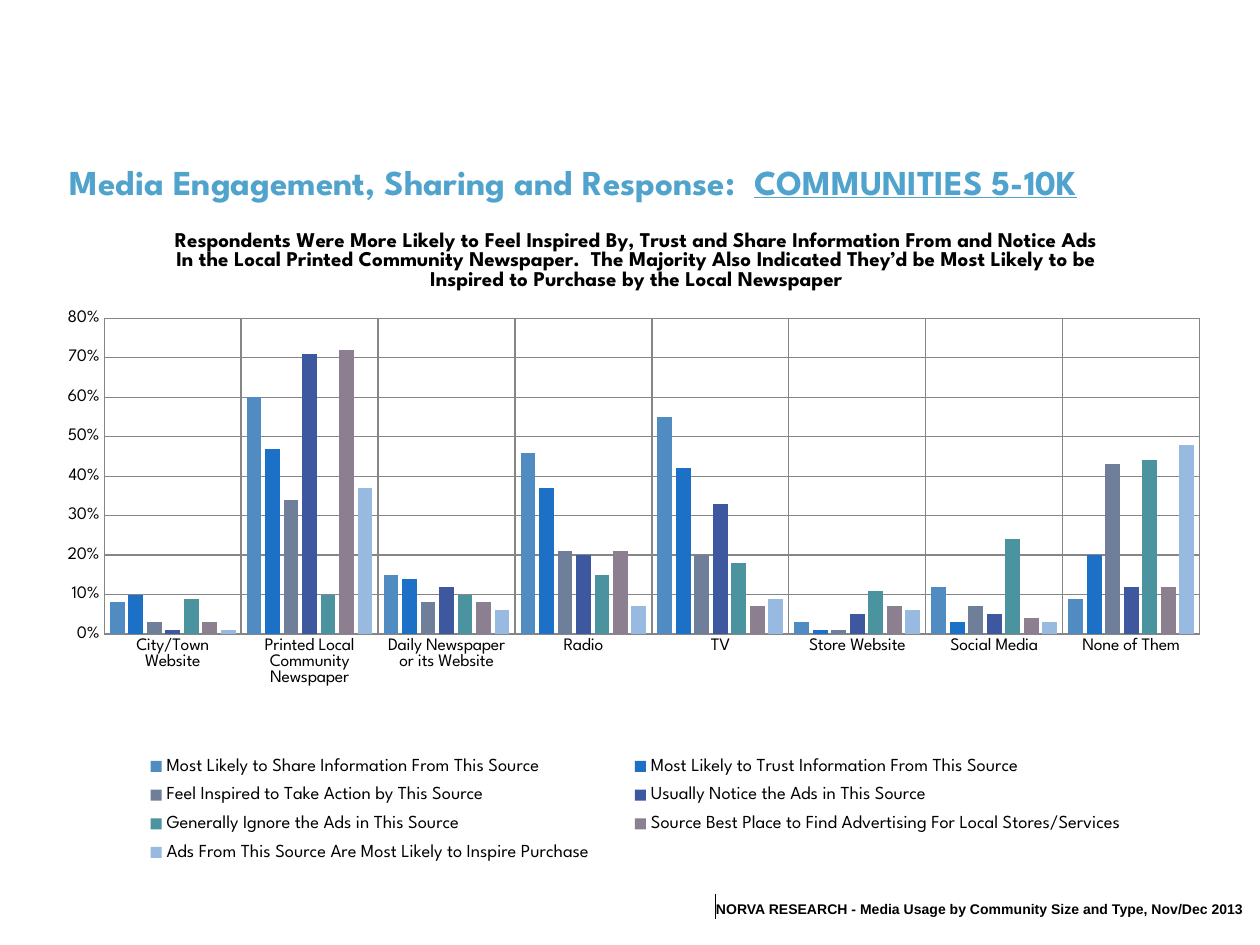
from lxml import etree
from pptx import Presentation
from pptx import util as u
from pptx.chart.data import CategoryChartData
from pptx.dml.color import RGBColor
from pptx.enum import chart as charts, text
from pptx.oxml import parse_xml
from pptx.oxml.ns import nsdecls, qn

PX = 914400 / 126
BLACK = RGBColor(0, 0, 0)
SKY = RGBColor(0x50, 0xA3, 0xCD)
GRID = RGBColor(0x86, 0x86, 0x86)
DISPLAY = "League Spartan"

HEADING = [("Media Engagement, Sharing and Response:  ", False), ("COMMUNITIES 5-10K", True)]
CHART_TITLE = (
    "Respondents Were More Likely to Feel Inspired By, Trust and Share Information From "
    "and Notice Ads In the Local Printed Community Newspaper.  The Majority Also Indicated "
    "They’d be Most Likely to be Inspired to Purchase by the Local Newspaper"
)
FOOTER = "NORVA RESEARCH - Media Usage by Community Size and Type, Nov/Dec 2013"
SOURCES = [
    "City/Town Website", "Printed Local Community Newspaper", "Daily Newspaper or its Website",
    "Radio", "TV", "Store Website", "Social Media", "None of Them",
]
RESPONSES = [
    ("Most Likely to Share Information From This Source",
     RGBColor(0x50, 0x8B, 0xC1), [8, 60, 15, 46, 55, 3, 12, 9]),
    ("Most Likely to Trust Information From This Source",
     RGBColor(0x1C, 0x70, 0xC6), [10, 47, 14, 37, 42, 1, 3, 20]),
    ("Feel Inspired to Take Action by This Source",
     RGBColor(0x6F, 0x7F, 0x99), [3, 34, 8, 21, 20, 1, 7, 43]),
    ("Usually Notice the Ads in This Source",
     RGBColor(0x3D, 0x58, 0x9E), [1, 71, 12, 20, 33, 5, 5, 12]),
    ("Generally Ignore the Ads in This Source",
     RGBColor(0x4B, 0x93, 0x9F), [9, 10, 10, 15, 18, 11, 24, 44]),
    ("Source Best Place to Find Advertising For Local Stores/Services",
     RGBColor(0x8C, 0x7F, 0x90), [3, 72, 8, 21, 7, 7, 4, 12]),
    ("Ads From This Source Are Most Likely to Inspire Purchase",
     RGBColor(0x98, 0xBA, 0xE0), [1, 37, 6, 7, 9, 6, 3, 48]),
]


def px(*lengths):
    return [u.Emu(round(length * PX)) for length in lengths]


def style(font, size, color=BLACK, bold=False, name=DISPLAY):
    font.name, font.size, font.bold = name, u.Pt(size), bold
    font.color.rgb = color


def place(parent, index, **settings):
    layout = parent.find(qn("c:layout"))
    if layout is None:
        layout = parse_xml(f"<c:layout {nsdecls('c')}/>")
        parent.insert(index, layout)
    manual = etree.SubElement(layout, qn("c:manualLayout"))
    for key, value in settings.items():
        etree.SubElement(manual, qn(f"c:{key}")).set("val", str(value))


def add_chart(page):
    data = CategoryChartData(number_format="0%")
    data.categories = SOURCES
    for name, _, percents in RESPONSES:
        data.add_series(name, [percent / 100 for percent in percents])
    frame = page.shapes.add_chart(
        charts.XL_CHART_TYPE.COLUMN_CLUSTERED, *px(28, 152, 1192, 743), data)
    chart = frame.chart
    style(chart.font, 10)

    span = chart.chart_title.text_frame.paragraphs[0].add_run()
    span.text = CHART_TITLE
    style(span.font, 12, bold=True)
    place(chart.chart_title._element, 1, xMode="edge", yMode="edge", x=0.12, y=0.1)

    plot = chart.plots[0]
    plot.gap_width, plot.overlap, plot.vary_by_categories = 75, -25, False
    for series, (_, color, _) in zip(plot.series, RESPONSES):
        series.format.fill.solid()
        series.format.fill.fore_color.rgb = color
    place(plot._element.getparent(), 0, layoutTarget="inner", xMode="edge", yMode="edge",
          x=0.064, y=0.224, w=0.919, h=0.425)

    for axis in (chart.category_axis, chart.value_axis):
        axis.has_major_gridlines = True
        axis.major_tick_mark = axis.minor_tick_mark = charts.XL_TICK_MARK.NONE
        style(axis.tick_labels.font, 10, bold=axis is chart.value_axis)
        for line in (axis.major_gridlines.format.line, axis.format.line):
            line.color.rgb = GRID
            line.width = u.Pt(0.75)
    values = chart.value_axis
    values.minimum_scale, values.maximum_scale, values.major_unit = 0, 0.8, 0.1
    values.tick_labels.number_format = "0%"
    values.tick_labels.number_format_is_linked = False
    values.format.line.fill.background()

    chart.has_legend = True
    legend = chart.legend
    legend.position = charts.XL_LEGEND_POSITION.BOTTOM
    legend.include_in_layout = False
    style(legend.font, 10.5)
    place(legend._element, 1, xMode="edge", yMode="edge", x=0.07, y=0.8, w=0.88, h=0.17)


def add_heading(page):
    box = page.shapes.add_textbox(*px(57, 154, 1167, 55))
    box.text_frame.word_wrap = True
    for words, underlined in HEADING:
        span = box.text_frame.paragraphs[0].add_run()
        span.text = words
        style(span.font, 20, SKY, bold=True)
        span.font.underline = underlined


def add_footer(page):
    table = page.shapes.add_table(1, 1, *px(715, 895, 530, 23)).table
    table.first_row = table.horz_banding = False
    cell = table.cell(0, 0)
    cell.fill.background()
    cell.margin_left, cell.margin_top, cell.margin_right, cell.margin_bottom = px(1, 1, 1, 0)
    cell.vertical_anchor = text.MSO_ANCHOR.BOTTOM
    span = cell.text_frame.paragraphs[0].add_run()
    span.text = FOOTER
    style(span.font, 8, bold=True, name="Arial")
    cell._tc.get_or_add_tcPr().insert(0, parse_xml(
        f'<a:lnL {nsdecls("a")} w="{u.Pt(0.5)}"><a:solidFill>'
        f'<a:srgbClr val="{BLACK}"/></a:solidFill></a:lnL>'))


def main():
    deck = Presentation()
    deck.slide_width, deck.slide_height = px(1260, 945)
    page = deck.slides.add_slide(deck.slide_layouts[6])
    add_chart(page)
    add_heading(page)
    add_footer(page)
    deck.save("out.pptx")


if __name__ == "__main__":
    main()
